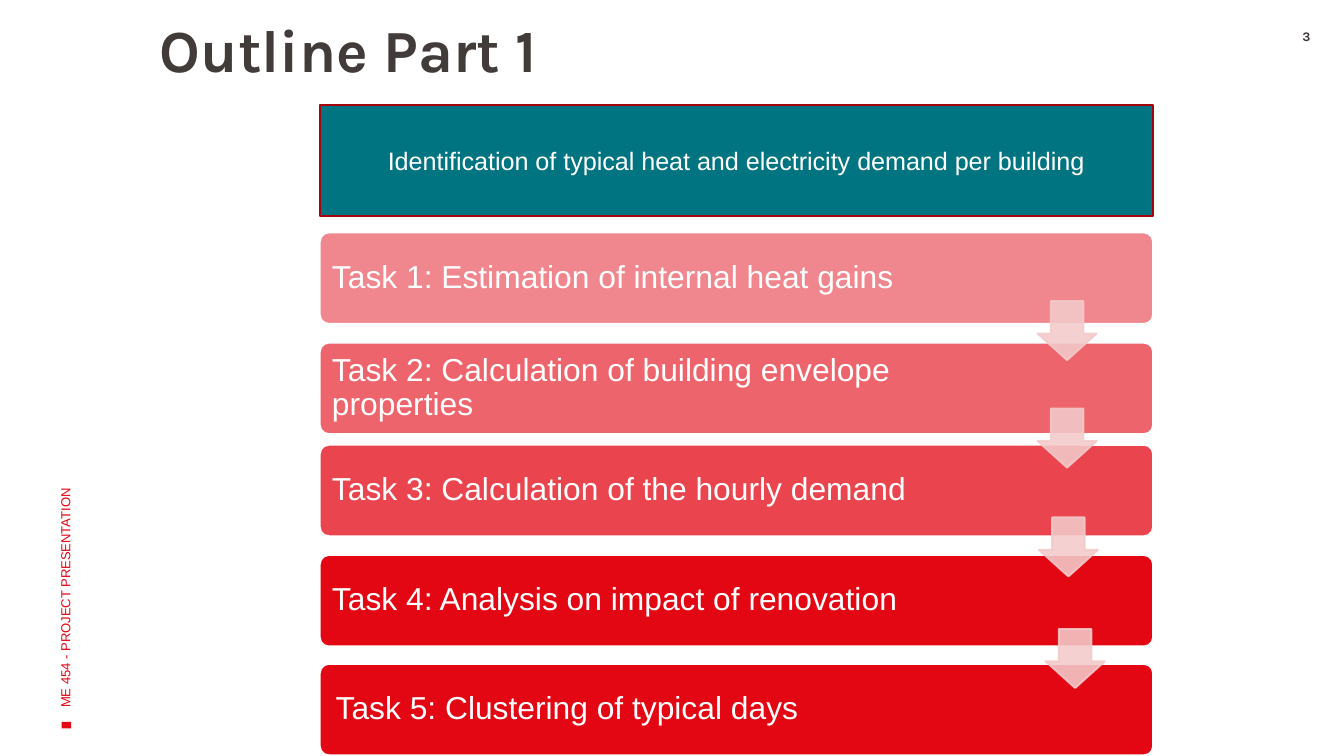
"""Build the Outline Part 1 slide with its chain of five tasks."""
from dataclasses import dataclass

from lxml.etree import SubElement
from pptx import Presentation
from pptx.dml.color import RGBColor
from pptx.enum.shapes import MSO_SHAPE as Shape
from pptx.enum.text import MSO_ANCHOR as Anchor, PP_ALIGN as Align
from pptx.oxml.ns import qn
from pptx.util import Inches, Pt


@dataclass(frozen=True)
class Theme:
    red: str = "E30613"
    dark_red: str = "A5040D"
    teal: str = "007480"
    pink: str = "F3CACA"
    ink: str = "413C3A"
    white: str = "FFFFFF"
    heading: str = "Karla"
    body: str = "Arial"
    title_size: float = 32
    banner_size: float = 13.5
    task_size: float = 17
    small_size: float = 7


THEME = Theme()
LEFT, WIDTH, TASK_H, ARROW = 2.38, 6.2, 0.68, 0.44
TASKS = [
    (1.73, 48, "Task 1: Estimation of internal heat gains"),
    (2.55, 62, "Task 2: Calculation of building envelope properties"),
    (3.31, 75, "Task 3: Calculation of the hourly demand"),
    (4.13, 100, "Task 4: Analysis on impact of renovation"),
]
LAST_TASK = (4.94, 100, "Task 5: Clustering of typical days")
ARROWS = [(7.72, 2.24), (7.72, 3.04), (7.73, 3.85), (7.78, 4.68)]


def paint(fmt, color, alpha=100):
    fmt.solid()
    fmt.fore_color.rgb = RGBColor.from_string(color)
    if alpha < 100:
        for clr in fmt._xPr.iter(qn("a:srgbClr")):
            if clr.getparent().getparent() is fmt._xPr:
                SubElement(clr, qn("a:alpha"), val=str(alpha * 1000))


def write(sp, text, size, color, font=THEME.body, bold=False, align=Align.LEFT,
          anchor=Anchor.MIDDLE, spacing=None, insets=(0.1, 0.05, 0.1, 0.05)):
    tf = sp.text_frame
    tf.text = text
    tf.word_wrap = True
    tf.vertical_anchor = anchor
    tf.margin_left, tf.margin_top, tf.margin_right, tf.margin_bottom = map(Inches, insets)
    p = tf.paragraphs[0]
    p.alignment = align
    if spacing:
        p.line_spacing = spacing
    f = p.runs[0].font
    f.name, f.size, f.bold = font, Pt(size), bold
    f.color.rgb = RGBColor.from_string(color)


def add_text(s, box, text, size, color, **style):
    sp = s.shapes.add_textbox(*map(Inches, box))
    write(sp, text, size, color, **style)
    return sp


def add_block(s, kind, box, fill, line=None, alpha=100, line_alpha=100, adj=()):
    sp = s.shapes.add_shape(kind, *map(Inches, box))
    sp.shadow.inherit = False
    for i, value in enumerate(adj):
        sp.adjustments[i] = value
    paint(sp.fill, fill, alpha)
    if line:
        sp.line.width = Pt(1)
        paint(sp.line.fill, line, line_alpha)
    else:
        sp.line.fill.background()
    return sp


def add_task(s, top, alpha):
    return add_block(s, Shape.ROUNDED_RECTANGLE, (LEFT, top, WIDTH, TASK_H),
                     THEME.red, THEME.white, alpha, adj=(0.1,))


def add_frame(s):
    mark = add_block(s, Shape.RECTANGLE, (0.47, 5.36, 0.05, 0.07), THEME.red)
    footer = add_text(s, (-1.34, 3.04, 3.65, 1), "ME 454 - PROJECT PRESENTATION",
                      THEME.small_size, THEME.red)
    mark.rotation = footer.rotation = 270
    add_text(s, (0.99, 0.2, 4.01, 1.17), "Outline Part 1", THEME.title_size, THEME.ink,
             font=THEME.heading, bold=True, anchor=Anchor.TOP, spacing=0.8,
             insets=(0.2, 0, 0.08, 0.05))
    add_text(s, (9.44, 0.21, 0.56, 0.18), "3", THEME.small_size, THEME.ink,
             font=THEME.heading, bold=True, align=Align.CENTER, anchor=Anchor.TOP,
             insets=(0.1, 0, 0.1, 0))


def add_tasks(s):
    for top, alpha, text in TASKS:
        add_task(s, top, alpha)
        add_text(s, (LEFT + 0.02, top + 0.02, 5.09, TASK_H - 0.04), text,
                 THEME.task_size, THEME.white, spacing=0.9, insets=(0.07,) * 4)
    top, alpha, text = LAST_TASK
    write(add_task(s, top, alpha), text, THEME.task_size, THEME.white,
          spacing=0.9, insets=(0.1,) * 4)
    for left, top in ARROWS:
        add_block(s, Shape.DOWN_ARROW, (left, top, ARROW, ARROW), THEME.pink, THEME.pink,
                  alpha=88, line_alpha=88, adj=(0.55, 0.45))


def main():
    prs = Presentation()
    prs.slide_width = Inches(10)
    prs.slide_height = Inches(10 * 9 / 16)
    s = prs.slides.add_slide(prs.slide_layouts[6])
    add_frame(s)
    banner = add_block(s, Shape.RECTANGLE, (LEFT, 0.78, WIDTH, 0.83), THEME.teal, THEME.dark_red)
    write(banner, "Identification of typical heat and electricity demand per building",
          THEME.banner_size, THEME.white, align=Align.CENTER)
    add_tasks(s)
    prs.save("out.pptx")


if __name__ == "__main__":
    main()
